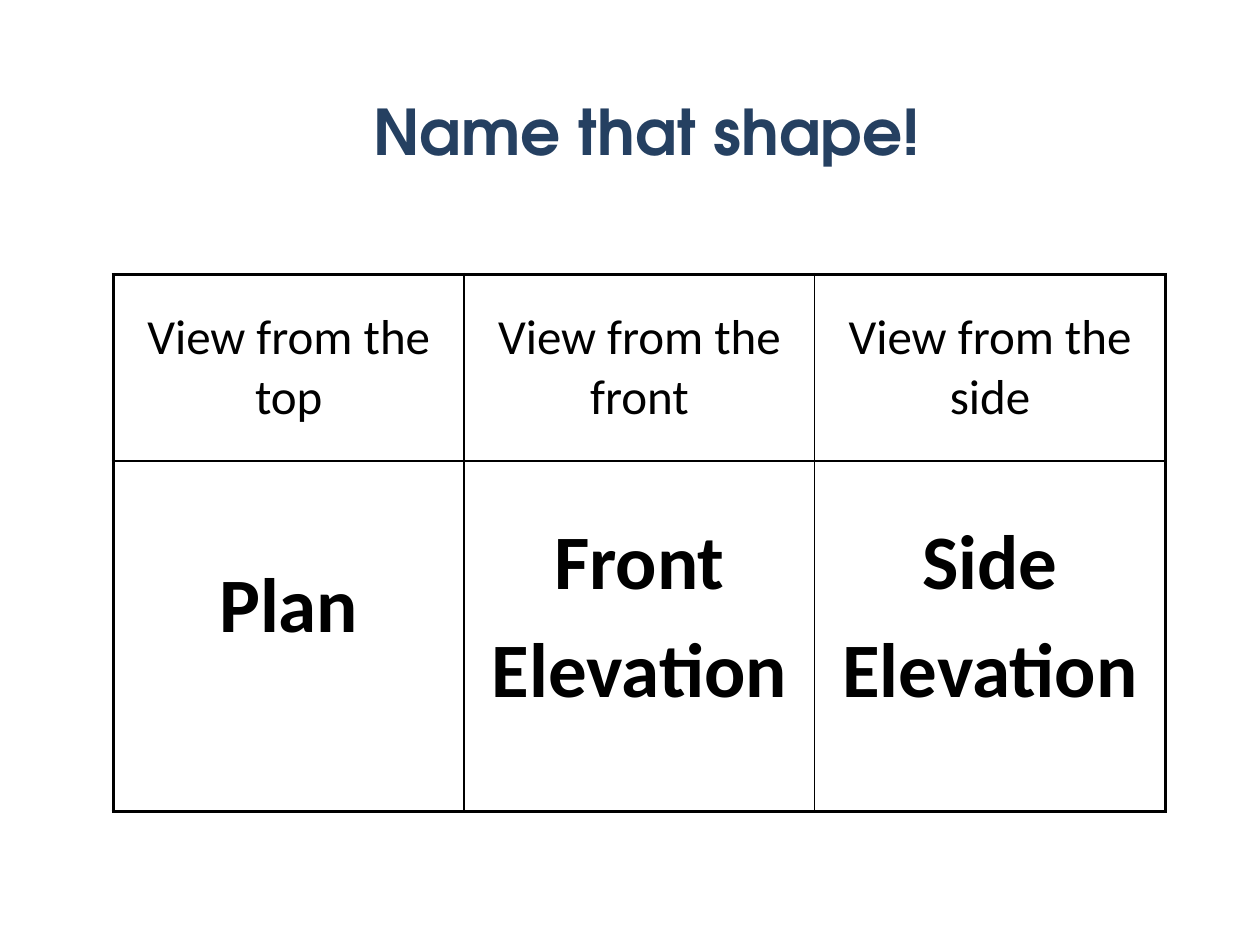
from lxml.etree import SubElement
from pptx import Presentation
from pptx.dml.color import RGBColor
from pptx.enum.text import MSO_ANCHOR, PP_ALIGN
from pptx.oxml.ns import qn
from pptx.util import Inches, Pt

BLACK = RGBColor(0, 0, 0)
NAVY = RGBColor(0x25, 0x40, 0x61)
THICK, THIN = Pt(2.25), Pt(1)
VIEWS = [
    ("View from the top", ["Plan"], 0.78),
    ("View from the front", ["Front", "Elevation"], 0.44),
    ("View from the side", ["Side", "Elevation"], 0.44),
]


def add_run(para, text, size, font, color, bold=False):
    """Add one centred, styled run to a paragraph."""
    para.alignment = PP_ALIGN.CENTER
    run = para.add_run()
    run.text = text
    run.font.size = Pt(size)
    run.font.name = font
    run.font.bold = bold
    run.font.color.rgb = color


def add_title(slide, text):
    """Place and fill the title."""
    title = slide.shapes.title
    title.left, title.top = Inches(2.38), Inches(0.68)
    title.width, title.height = Inches(5.51), Inches(0.71)
    frame = title.text_frame
    frame.word_wrap = False
    frame.vertical_anchor = MSO_ANCHOR.MIDDLE
    add_run(frame.paragraphs[0], text, 36, "TeX Gyre Adventor", NAVY, True)


def set_edges(cell, row, col):
    """Draw thick outer and thin inner borders round a cell."""
    outer = {"L": col == 0, "R": col == 2, "T": row == 0, "B": row == 1}
    props = cell._tc.get_or_add_tcPr()
    for side, thick in outer.items():
        line = SubElement(props, qn(f"a:ln{side}"), w=str(THICK if thick else THIN))
        fill = SubElement(line, qn("a:solidFill"))
        SubElement(fill, qn("a:srgbClr"), val=str(BLACK))


def fill_cell(cell, lines, size, bold=False):
    """Write one paragraph per line into an unfilled cell."""
    cell.fill.background()
    frame = cell.text_frame
    for i, text in enumerate(lines):
        para = frame.add_paragraph() if i else frame.paragraphs[0]
        para.space_before = Pt(8 if i else 0)
        add_run(para, text, size, "Calibri", BLACK, bold)


def add_views(slide):
    """Add the table of views and their names."""
    table = slide.shapes.add_table(
        2, 3, Inches(0.9), Inches(2.18), Inches(8.35), Inches(4.26)
    ).table
    table.first_row = table.horz_banding = False
    table.rows[0].height, table.rows[1].height = Inches(1.48), Inches(2.78)
    for col, (view, name, gap) in enumerate(VIEWS):
        head, body = table.cell(0, col), table.cell(1, col)
        set_edges(head, 0, col)
        set_edges(body, 1, col)
        fill_cell(head, [view], 28)
        fill_cell(body, name, 44, True)
        head.vertical_anchor = MSO_ANCHOR.MIDDLE
        body.vertical_anchor = MSO_ANCHOR.TOP
        body.margin_top = Inches(gap)


def main():
    """Build and save the slide."""
    deck = Presentation()
    deck.slide_width, deck.slide_height = Inches(10), Inches(7.5)
    slide = deck.slides.add_slide(deck.slide_layouts[5])
    add_title(slide, "Name that shape!")
    add_views(slide)
    deck.save("out.pptx")


if __name__ == "__main__":
    main()
